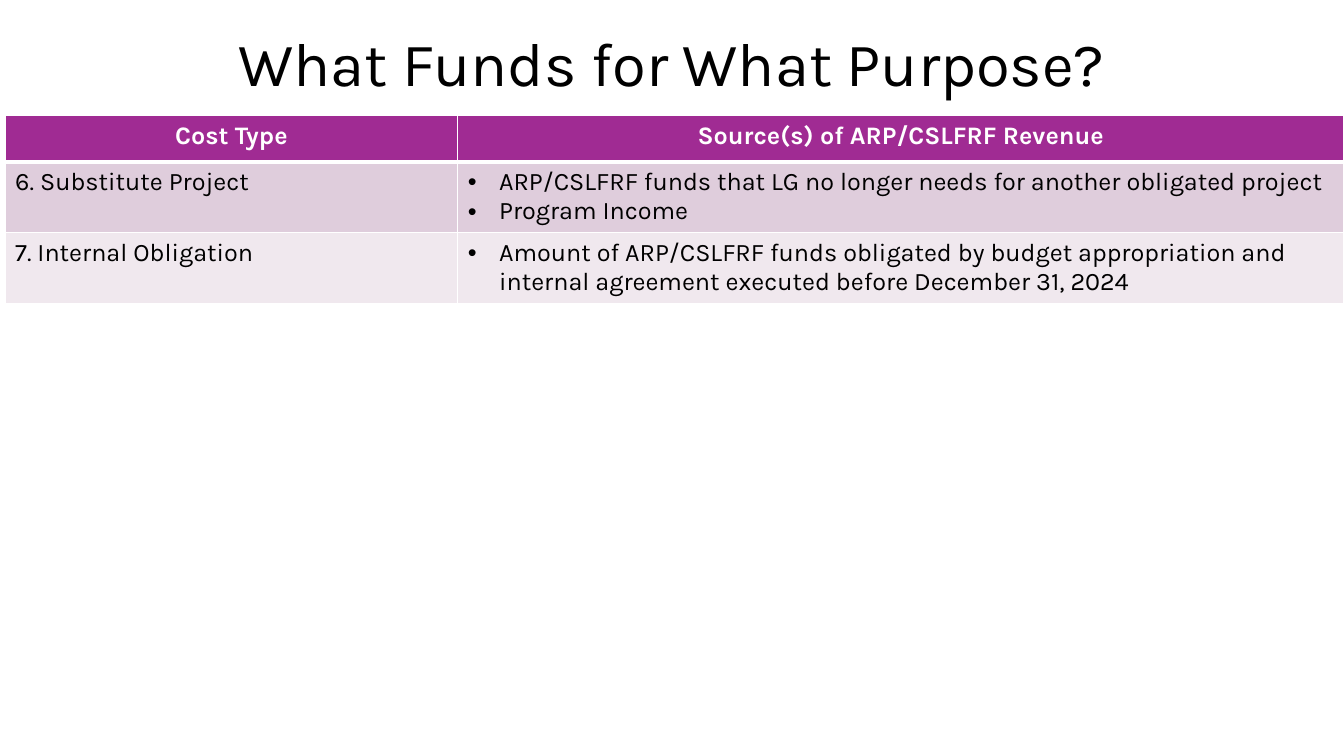
import pptx
import pptx.dml.color
import pptx.enum.text
import pptx.oxml
import pptx.oxml.ns
import pptx.util

BLACK = pptx.dml.color.RGBColor(0x00, 0x00, 0x00)
WHITE = pptx.dml.color.RGBColor(0xFF, 0xFF, 0xFF)
PURPLE = pptx.dml.color.RGBColor(0xA0, 0x2B, 0x93)
MAUVE = pptx.dml.color.RGBColor(0xDF, 0xCD, 0xDC)
PALE_MAUVE = pptx.dml.color.RGBColor(0xF0, 0xE8, 0xEE)

TITLE = "What Funds for What Purpose?"
HEADERS = ["Cost Type", "Source(s) of ARP/CSLFRF Revenue"]
COST_TYPES = [
    ("6. Substitute Project", [
        "ARP/CSLFRF funds that LG no longer needs for another obligated project",
        "Program Income",
    ]),
    ("7. Internal Obligation", [
        "Amount of ARP/CSLFRF funds obligated by budget appropriation and "
        "internal agreement executed before December 31, 2024",
    ]),
]


class FundsSlide:
    font_name = "Karla"
    title_size = 44
    table_size = 18
    bullet_indent = pptx.util.Inches(0.31)

    def __init__(self, presentation):
        self.width = presentation.slide_width
        self.height = presentation.slide_height
        self.slide = presentation.slides.add_slide(presentation.slide_layouts[6])

    def across(self, percent):
        return round(self.width * percent / 100)

    def down(self, percent):
        return round(self.height * percent / 100)

    def add_run(self, paragraph, text, size, color, bold=False):
        run = paragraph.add_run()
        run.text = text
        run.font.name = self.font_name
        run.font.size = pptx.util.Pt(size)
        run.font.bold = bold
        run.font.color.rgb = color

    def add_title(self, text, left, top, width, height):
        shape = self.slide.shapes.add_textbox(
            self.across(left), self.down(top), self.across(width), self.down(height))
        frame = shape.text_frame
        frame.word_wrap = True
        frame.vertical_anchor = pptx.enum.text.MSO_ANCHOR.MIDDLE
        paragraph = frame.paragraphs[0]
        paragraph.alignment = pptx.enum.text.PP_ALIGN.CENTER
        paragraph.line_spacing = 0.9
        self.add_run(paragraph, text, self.title_size, BLACK)

    def add_table(self, left, top, column_shares, row_shares):
        shape = self.slide.shapes.add_table(
            len(row_shares), len(column_shares), self.across(left), self.down(top),
            self.across(sum(column_shares)), self.down(sum(row_shares)))
        table = shape.table
        for column, share in zip(table.columns, column_shares):
            column.width = self.across(share)
        for row, share in zip(table.rows, row_shares):
            row.height = self.down(share)
        return table

    def add_bullet(self, paragraph):
        properties = paragraph._p.get_or_add_pPr()
        properties.set("marL", str(self.bullet_indent))
        properties.set("indent", str(-self.bullet_indent))
        namespace = pptx.oxml.ns.nsdecls("a")
        for markup in (f'<a:buFont {namespace} typeface="Arial"/>',
                       f'<a:buChar {namespace} char="•"/>'):
            properties.append(pptx.oxml.parse_xml(markup))

    def add_borders(self, cell, top, bottom):
        properties = cell._tc.get_or_add_tcPr()
        widths = {"lnL": 1, "lnR": 1, "lnT": top, "lnB": bottom}
        for position, (side, width) in enumerate(widths.items()):
            properties.insert(position, pptx.oxml.parse_xml(
                f'<a:{side} {pptx.oxml.ns.nsdecls("a")} w="{pptx.util.Pt(width)}">'
                f'<a:solidFill><a:srgbClr val="{WHITE}"/></a:solidFill></a:{side}>'))

    def fill_cell(self, cell, lines, fill, header=False, bulleted=False, top=1):
        cell.fill.solid()
        cell.fill.fore_color.rgb = fill
        self.add_borders(cell, top, 3 if header else 1)
        frame = cell.text_frame
        for index, line in enumerate(lines):
            paragraph = frame.add_paragraph() if index else frame.paragraphs[0]
            if header:
                paragraph.alignment = pptx.enum.text.PP_ALIGN.CENTER
            if bulleted:
                self.add_bullet(paragraph)
            self.add_run(paragraph, line, self.table_size,
                         WHITE if header else BLACK, header)


def main():
    presentation = pptx.Presentation()
    presentation.slide_width = pptx.util.Inches(13.33)
    presentation.slide_height = pptx.util.Inches(7.5)
    funds = FundsSlide(presentation)
    funds.add_title(TITLE, 6.9, -0.8, 86.27, 19.33)
    table = funds.add_table(0.38, 15.33, [33.68, 65.94], [6.13, 9.1, 9.1])
    for column, header in enumerate(HEADERS):
        funds.fill_cell(table.cell(0, column), [header], PURPLE, header=True)
    for row, (cost_type, sources) in enumerate(COST_TYPES, start=1):
        fill = MAUVE if row % 2 else PALE_MAUVE
        top = 3 if row == 1 else 1
        funds.fill_cell(table.cell(row, 0), [cost_type], fill, top=top)
        funds.fill_cell(table.cell(row, 1), sources, fill, bulleted=True, top=top)
    presentation.save("out.pptx")


if __name__ == "__main__":
    main()
